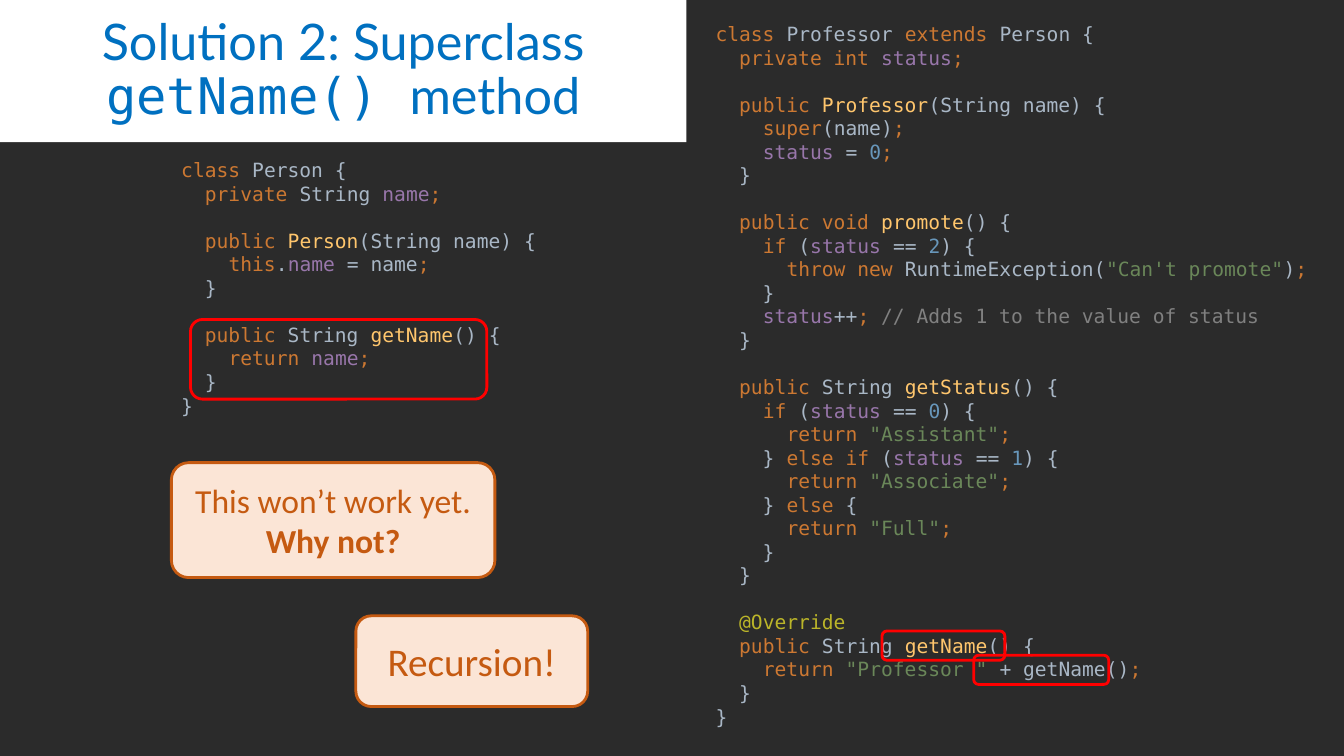
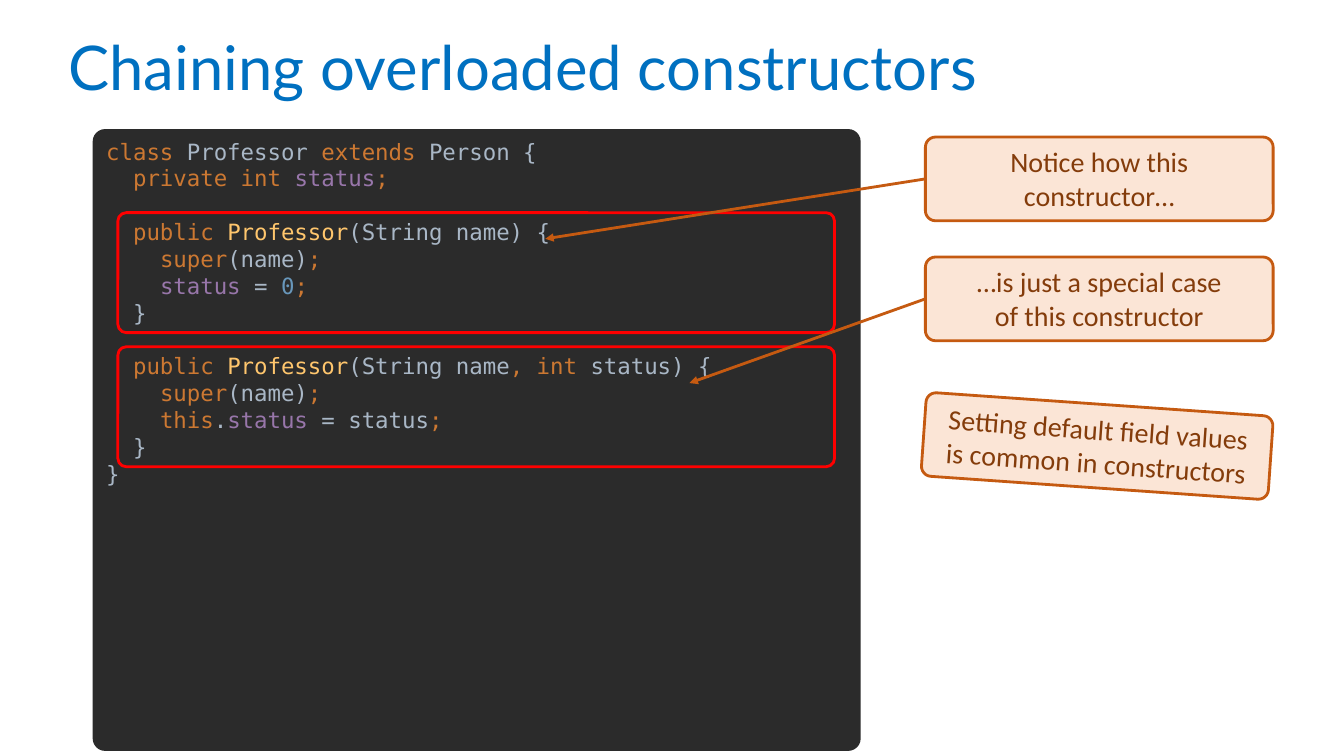
from lxml import etree
from pptx import Presentation
from pptx.dml import color
from pptx.enum import shapes, text
from pptx.oxml import ns
from pptx.util import Pt

COLORS = {
    "title": "0070C0", "white": "FFFFFF", "editor": "2B2B2B", "highlight": "FF0000",
    "callout": "FBE5D6", "accent": "C55A11", "note": "843C0B",
    "plain": "A9B7C6", "keyword": "CC7832", "field": "9876AA", "method": "FFC66D",
    "number": "6897BB", "string": "6A8759", "comment": "808080", "annotation": "BBB529",
}
RGB = {name: color.RGBColor.from_string(value) for name, value in COLORS.items()}

CODE_FONT = "DejaVu Sans Mono"
RUN_STYLES = {
    "p": ("plain", CODE_FONT, False),
    "k": ("keyword", CODE_FONT, False),
    "f": ("field", CODE_FONT, False),
    "m": ("method", CODE_FONT, False),
    "n": ("number", CODE_FONT, False),
    "s": ("string", CODE_FONT, False),
    "c": ("comment", CODE_FONT, False),
    "a": ("annotation", CODE_FONT, False),
    "T": ("title", "Lato", False),
    "G": ("title", CODE_FONT, False),
    "Q": ("accent", "Calibri", False),
    "B": ("accent", "Calibri", True),
    "N": ("note", "Calibri", False),
}
CENTER = {"alignment": text.PP_ALIGN.CENTER}
TITLE = {"line_spacing": 0.9}
CODE_14 = {"line_spacing": Pt(16.8)}
CODE_16 = {"line_spacing": Pt(19.2)}

PROFESSOR_START = """~kclass ~pProfessor ~kextends ~pPerson {
  ~kprivate int ~fstatus~k;

  ~kpublic ~mProfessor~p(String name) {
    ~ksuper~p(name)~k;
    ~fstatus ~p= ~n0~k;
  }
"""
PROFESSOR_RANKED = PROFESSOR_START + """
  ~kpublic void ~mpromote~p() {
    ~kif ~p(~fstatus ~p== ~n2~p) {
      ~kthrow new ~pRuntimeException(~s"Can't promote"~p)~k;
    }
    ~fstatus~p++~k; ~c// Adds 1 to the value of status
  }

  ~kpublic ~pString ~mgetStatus~p() {
    ~kif ~p(~fstatus ~p== ~n0~p) {
      ~kreturn ~s"Assistant"~k;
    } ~kelse if ~p(~fstatus ~p== ~n1~p) {
      ~kreturn ~s"Associate"~k;
    } ~kelse ~p{
      ~kreturn ~s"Full"~k;
    }
  }

  ~a@Override
  ~kpublic ~pString ~mgetName~p() {
    ~kreturn ~s"Professor " ~p+ getName()~k;
  }
}"""
PROFESSOR_OVERLOADED = PROFESSOR_START + """
  ~kpublic ~mProfessor~p(String name~k, int ~pstatus) {
    ~ksuper~p(name)~k;
    ~kthis~p.~fstatus ~p= status~k;
  }
}"""
PERSON = """~kclass ~pPerson {
  ~kprivate ~pString ~fname~k;

  ~kpublic ~mPerson~p(String name) {
    ~kthis~p.~fname ~p= name~k;
  }

  ~kpublic ~pString ~mgetName~p() {
    ~kreturn ~fname~k;
  }
}"""


def add_box(slide, frame, corner=None, fill=None, line=None):
    frame = [Pt(length) for length in frame]
    if corner is None:
        shape = slide.shapes.add_textbox(*frame)
    else:
        shape = slide.shapes.add_shape(shapes.MSO_SHAPE.ROUNDED_RECTANGLE, *frame)
        shape.adjustments[0] = corner
        shape.shadow.inherit = False
    if fill:
        shape.fill.solid()
        shape.fill.fore_color.rgb = RGB[fill]
    else:
        shape.fill.background()
    if line:
        shape.line.color.rgb = RGB[line]
        shape.line.width = Pt(2)
    else:
        shape.line.fill.background()
    return shape


def write(shape, marked_text, size, paragraph_format, anchor=text.MSO_ANCHOR.TOP):
    frame = shape.text_frame
    frame.word_wrap = True
    frame.vertical_anchor = anchor
    paragraph = frame.paragraphs[0]
    after_gap = False
    for index, line in enumerate(marked_text.split("\n")):
        if not line:
            after_gap = True
            continue
        if index:
            paragraph = frame.add_paragraph()
        values = {"alignment": text.PP_ALIGN.LEFT, **paragraph_format}
        if after_gap:
            values["space_before"] = paragraph_format["line_spacing"]
            after_gap = False
        for name, value in values.items():
            setattr(paragraph, name, value)
        for chunk in ("~p" + line).split("~")[1:]:
            if len(chunk) == 1:
                continue
            run = paragraph.add_run()
            run.text = chunk[1:]
            color_name, font_name, bold = RUN_STYLES[chunk[0]]
            for name, value in {"name": font_name, "size": Pt(size), "bold": bold}.items():
                setattr(run.font, name, value)
            run.font.color.rgb = RGB[color_name]


presentation = Presentation()
presentation.slide_width = Pt(960)
presentation.slide_height = Pt(540)
blank = presentation.slide_layouts[6]

slide = presentation.slides.add_slide(blank)
slide.background.fill.solid()
slide.background.fill.fore_color.rgb = RGB["editor"]
title = add_box(slide, (0, 0, 490.3, 101.5), fill="white")
write(title, "~TSolution 2: Superclass ~GgetName() ~Tmethod", 36,
      {**TITLE, **CENTER}, text.MSO_ANCHOR.MIDDLE)
write(add_box(slide, (504, 12.2, 450, 516.2)), PROFESSOR_RANKED, 14, CODE_14)
write(add_box(slide, (122.4, 109.4, 314.6, 193.7)), PERSON, 14, CODE_14)

for frame, corner in (
    ((136.1, 228.2, 211.7, 56.9), 0.15),
    ((695.5, 468, 96.5, 20.9), 0.17),
    ((630, 450.7, 87.8, 20.9), 0.17),
):
    add_box(slide, frame, corner, line="highlight")

for frame, corner, message, size in (
    ((122.4, 330.5, 231.1, 82.1), 0.15, "~QThis won’t work yet. ~BWhy not?", 24),
    ((254.2, 439.9, 165.6, 64.8), 0.17, "~QRecursion!", 28),
):
    callout = add_box(slide, frame, corner, "callout", "accent")
    write(callout, message, size, CENTER, text.MSO_ANCHOR.MIDDLE)

slide = presentation.slides.add_slide(blank)
slide.background.fill.solid()
slide.background.fill.fore_color.rgb = RGB["white"]
write(add_box(slide, (41.8, 23, 843.8, 58.3)), "~TChaining overloaded constructors", 44, TITLE)
editor = add_box(slide, (66.2, 92.2, 548.6, 444.2), 0.02, "editor")
write(editor, PROFESSOR_OVERLOADED, 16, CODE_16)

note_left, note_width, note_height = 661, 248.4, 59.8
for note_top, highlight_top, tip, message in (
    (97.9, 151.9, (389.5, 170.6), "~NNotice how this constructor…"),
    (183.6, 247.7, (492.5, 273.6), "~N…is just a special case\n~Nof this constructor"),
):
    add_box(slide, (84.2, highlight_top, 511.9, 85.7), 0.07, line="highlight")
    note = add_box(slide, (note_left, note_top, note_width, note_height), 0.12, "callout", "accent")
    write(note, message, 20, CENTER)
    arrow = slide.shapes.add_connector(
        shapes.MSO_CONNECTOR.STRAIGHT, Pt(note_left), Pt(note_top + note_height / 2),
        *[Pt(length) for length in tip])
    arrow.line.color.rgb = RGB["accent"]
    arrow.line.width = Pt(2)
    etree.SubElement(arrow.line._get_or_add_ln(), ns.qn("a:tailEnd"), type="triangle")
    etree.SubElement(arrow._element.spPr, ns.qn("a:effectLst"))

tilted_note = add_box(slide, (659.5, 288.7, note_width, note_height), 0.12, "callout", "accent")
tilted_note.rotation = 4
write(tilted_note, "~NSetting default field values is common in constructors", 20, CENTER)

presentation.save("out.pptx")
